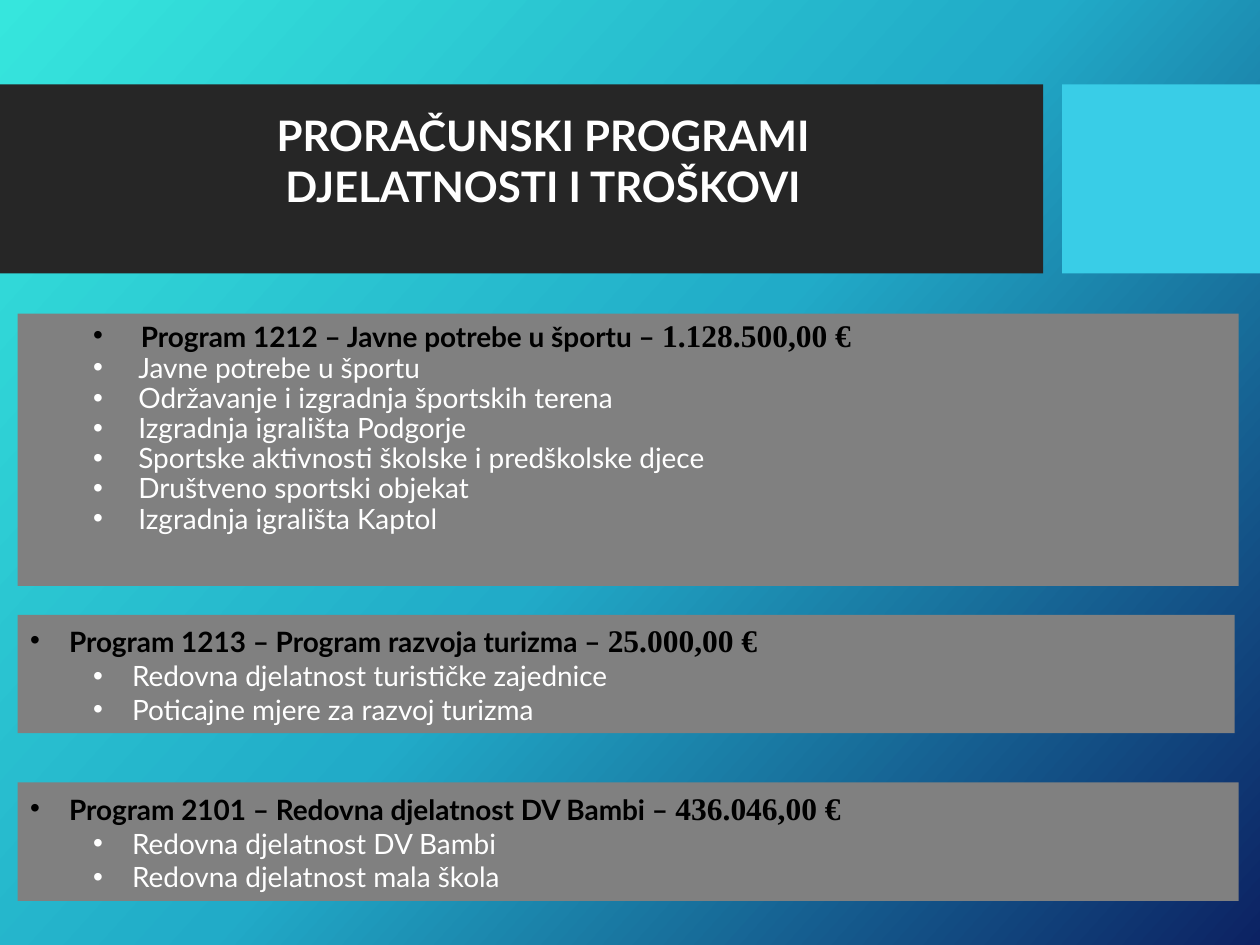
import copy

import pptx
import pptx.util
from lxml import etree
from pptx.dml.color import RGBColor
from pptx.enum.shapes import MSO_SHAPE
from pptx.enum.text import MSO_ANCHOR, PP_ALIGN
from pptx.oxml.ns import qn
from pptx.util import Inches

WHITE = RGBColor(0xFF, 0xFF, 0xFF)
BLACK = RGBColor(0, 0, 0)
CHARCOAL = RGBColor(0x26, 0x26, 0x26)
CYAN = RGBColor(0x39, 0xCD, 0xE7)
GRAY = RGBColor(0x80, 0x80, 0x80)
BACKGROUND = [
    (0, RGBColor(0x36, 0xE6, 0xDD)),
    (0.5, RGBColor(0x21, 0xAB, 0xC8)),
    (1, RGBColor(0x0C, 0x22, 0x63)),
]

HEADING = {"name": "Lato", "size": pptx.util.Pt(16), "bold": True}
AMOUNT = {"name": "Times New Roman", "size": pptx.util.Pt(18), "bold": True}
ACTIVITY = {"name": "Lato", "size": pptx.util.Pt(16), "bold": False}
TITLE = {"name": "Lato", "size": pptx.util.Pt(24), "bold": True}

TITLE_LINES = ["PRORAČUNSKI PROGRAMI", "DJELATNOSTI I TROŠKOVI"]
BANDS = [((0, 0.67, 8.28, 1.5), CHARCOAL), ((8.43, 0.67, 1.57, 1.5), CYAN)]

# Indents are (text margin, hanging indent) in inches.
PROGRAMS = [
    {
        "box": (0.14, 2.49, 9.69, 2.16),
        "heading": "Program 1212 – Javne potrebe u športu – ",
        "amount": "1.128.500,00 €",
        "activities": [
            "Javne potrebe u športu",
            "Održavanje i izgradnja športskih terena",
            "Izgradnja igrališta Podgorje",
            "Sportske aktivnosti školske i predškolske djece",
            "Društveno sportski objekat",
            "Izgradnja igrališta Kaptol",
        ],
        "heading_indent": (0.88, -0.38),
        "activity_indent": (0.86, -0.36),
        "line_spacing": 0.9,
    },
    {
        "box": (0.14, 4.88, 9.66, 0.94),
        "heading": "Program 1213 – Program razvoja turizma – ",
        "amount": "25.000,00 €",
        "activities": [
            "Redovna djelatnost turističke zajednice",
            "Poticajne mjere za razvoj turizma",
        ],
        "heading_indent": (0.31, -0.31),
        "activity_indent": (0.81, -0.31),
        "line_spacing": 1.0,
    },
    {
        "box": (0.14, 6.21, 9.69, 0.94),
        "heading": "Program 2101 – Redovna djelatnost DV Bambi – ",
        "amount": "436.046,00 €",
        "activities": ["Redovna djelatnost DV Bambi", "Redovna djelatnost mala škola"],
        "heading_indent": (0.31, -0.31),
        "activity_indent": (0.81, -0.31),
        "line_spacing": 1.0,
    },
]


def paint_background(slide):
    fill = slide.background.fill
    fill.gradient()
    fill.gradient_angle = 318
    first_stop = fill._fill._gradFill.gsLst[0]
    first_stop.addnext(copy.deepcopy(first_stop))
    for stop, (position, color) in zip(fill.gradient_stops, BACKGROUND):
        stop.position = position
        stop.color.rgb = color


def add_panel(slide, box, color):
    panel = slide.shapes.add_shape(MSO_SHAPE.RECTANGLE, *map(Inches, box))
    panel.shadow.inherit = False
    panel.fill.solid()
    panel.fill.fore_color.rgb = color
    panel.line.fill.background()
    return panel


def format_font(font, style, color):
    for attribute, value in style.items():
        setattr(font, attribute, value)
    font.color.rgb = color


def add_bullet_line(paragraph, indent, line_spacing, pieces):
    """Fill a bulleted paragraph with (text, style, color) pieces."""
    margin, hanging = indent
    properties = paragraph._p.get_or_add_pPr()
    properties.set("marL", str(Inches(margin)))
    properties.set("indent", str(Inches(hanging)))
    etree.SubElement(properties, qn("a:buFont"), typeface="Arial")
    etree.SubElement(properties, qn("a:buChar"), char="•")
    paragraph.alignment = PP_ALIGN.LEFT
    paragraph.line_spacing = line_spacing
    for text, style, color in pieces:
        run = paragraph.add_run()
        run.text = text
        format_font(run.font, style, color)


def add_program(slide, program):
    frame = add_panel(slide, program["box"], GRAY).text_frame
    frame.word_wrap = True
    frame.vertical_anchor = MSO_ANCHOR.TOP
    spacing = program["line_spacing"]
    heading = [(program["heading"], HEADING, BLACK), (program["amount"], AMOUNT, BLACK)]
    add_bullet_line(frame.paragraphs[0], program["heading_indent"], spacing, heading)
    for activity in program["activities"]:
        add_bullet_line(frame.add_paragraph(), program["activity_indent"], spacing,
                        [(activity, ACTIVITY, WHITE)])


def set_title(title):
    title.left, title.top, title.width, title.height = map(Inches, (0.54, 0.82, 7.54, 1.18))
    frame = title.text_frame
    frame.word_wrap = True
    frame.vertical_anchor = MSO_ANCHOR.TOP
    frame.text = "\v".join(TITLE_LINES)
    paragraph = frame.paragraphs[0]
    paragraph.alignment = PP_ALIGN.CENTER
    for run in paragraph.runs:
        format_font(run.font, TITLE, WHITE)


def main():
    deck = pptx.Presentation()
    deck.slide_width, deck.slide_height = Inches(10), Inches(7.5)
    slide = deck.slides.add_slide(deck.slide_layouts[5])
    paint_background(slide)
    for box, color in BANDS:
        add_panel(slide, box, color)
    title = slide.shapes.title
    set_title(title)
    slide.shapes._spTree.append(title._element)  # bring in front of the bands
    for program in PROGRAMS:
        add_program(slide, program)
    deck.save("out.pptx")


if __name__ == "__main__":
    main()
